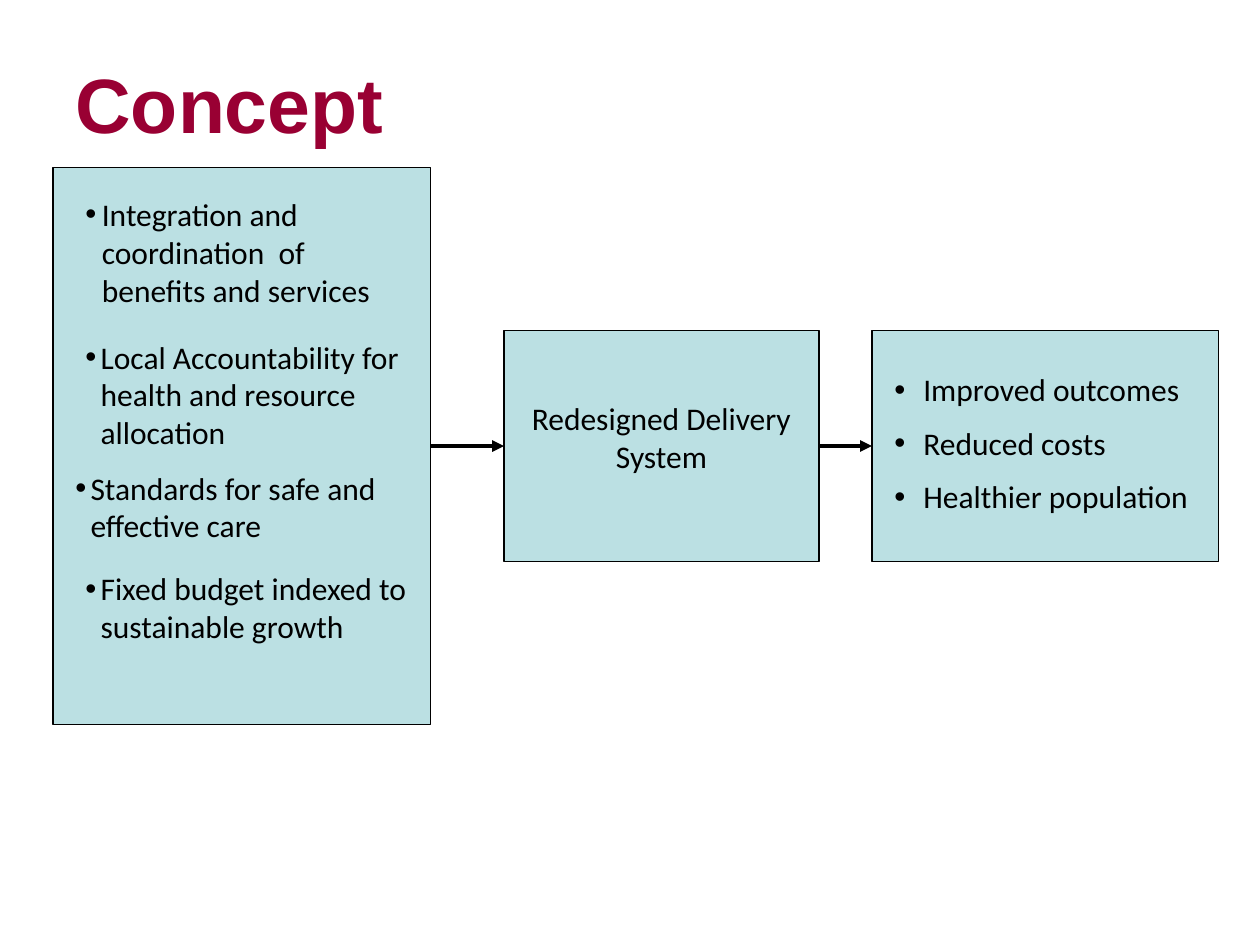
import pptx
import pptx.util
import pptx.dml.color
import pptx.enum.shapes
import pptx.enum.text
import pptx.oxml.ns
from lxml import etree

Inches = pptx.util.Inches
Pt = pptx.util.Pt
qn = pptx.oxml.ns.qn
ALIGN = pptx.enum.text.PP_ALIGN
ANCHOR = pptx.enum.text.MSO_ANCHOR

CRIMSON = pptx.dml.color.RGBColor(0x99, 0x00, 0x33)
PALE_TEAL = pptx.dml.color.RGBColor(0xBB, 0xE0, 0xE3)
BLACK = pptx.dml.color.RGBColor(0, 0, 0)

TITLE_FONT = {"name": "Arial", "size": Pt(44), "bold": True}
BODY_FONT = {"name": "Calibri", "size": Pt(18)}

MIDDLE_Y = 3.54
STAGES = [(0.42, 3, 4.42), (4, 2.5, 1.83), (6.92, 2.75, 1.83)]

TEXTS = [
    (["Concept"], (0.5, 0.3, 9.08, 1.03), TITLE_FONT, CRIMSON,
     {"alignment": ALIGN.LEFT}, 0),
    (["Integration and coordination  of benefits and services"],
     (0.58, 1.5, 2.58, 1), BODY_FONT, BLACK, {}, 0.13),
    (["Local Accountability for health and resource allocation"],
     (0.58, 2.63, 2.75, 1), BODY_FONT, BLACK, {}, 0.12),
    (["Standards for safe and effective care"],
     (0.5, 3.67, 2.75, 0.7), BODY_FONT, BLACK, {}, 0.12),
    (["Fixed budget indexed to sustainable growth"],
     (0.58, 4.47, 2.75, 0.7), BODY_FONT, BLACK, {}, 0.12),
    (["Redesigned Delivery System"],
     (4.11, 3.12, 2.28, 0.7), BODY_FONT, BLACK, {"alignment": ALIGN.CENTER}, 0),
    (["Improved outcomes", "Reduced costs", "Healthier population"],
     (7, 2.89, 2.58, 1.3), BODY_FONT, BLACK, {"space_after": Pt(9)}, 0.23),
]


def apply_format(target, values):
    for name, value in values.items():
        setattr(target, name, value)


def add_stage(slide, left, width, height):
    stage = slide.shapes.add_shape(
        pptx.enum.shapes.MSO_SHAPE.RECTANGLE, Inches(left),
        Inches(MIDDLE_Y - height / 2), Inches(width), Inches(height))
    stage.shadow.inherit = False
    stage.fill.solid()
    stage.fill.fore_color.rgb = PALE_TEAL
    stage.line.color.rgb = BLACK
    stage.line.width = Pt(0.75)
    return stage


def add_arrow(slide, source, target):
    arrow = slide.shapes.add_connector(
        pptx.enum.shapes.MSO_CONNECTOR.STRAIGHT, 0, 0, 0, 0)
    arrow.begin_connect(source, 3)
    arrow.end_connect(target, 1)
    arrow.line.color.rgb = BLACK
    arrow.line.width = Pt(2.25)
    etree.SubElement(arrow.line._get_or_add_ln(), qn("a:tailEnd"), type="triangle")
    etree.SubElement(arrow._element.spPr, qn("a:effectLst"))


def add_bullet(paragraph, indent):
    properties = paragraph._p.get_or_add_pPr()
    properties.set("marL", str(Inches(indent)))
    properties.set("indent", str(-Inches(indent)))
    etree.SubElement(properties, qn("a:buFont"), typeface="Arial")
    etree.SubElement(properties, qn("a:buChar"), char="•")


def add_text(slide, lines, place, font, color, layout, indent):
    frame = slide.shapes.add_textbox(*map(Inches, place)).text_frame
    apply_format(frame, {"word_wrap": True, "vertical_anchor":
                         ANCHOR.MIDDLE if font is TITLE_FONT else ANCHOR.TOP})
    frame.text = "\n".join(lines)
    for paragraph in frame.paragraphs:
        apply_format(paragraph, layout)
        run_font = paragraph.runs[0].font
        apply_format(run_font, font)
        run_font.color.rgb = color
        if indent:
            add_bullet(paragraph, indent)


def main():
    deck = pptx.Presentation()
    apply_format(deck, {"slide_width": Inches(10), "slide_height": Inches(7.5)})
    slide = deck.slides.add_slide(deck.slide_layouts[6])
    stages = [add_stage(slide, *stage) for stage in STAGES]
    for source, target in zip(stages, stages[1:]):
        add_arrow(slide, source, target)
    for text in TEXTS:
        add_text(slide, *text)
    deck.save("out.pptx")


if __name__ == "__main__":
    main()
